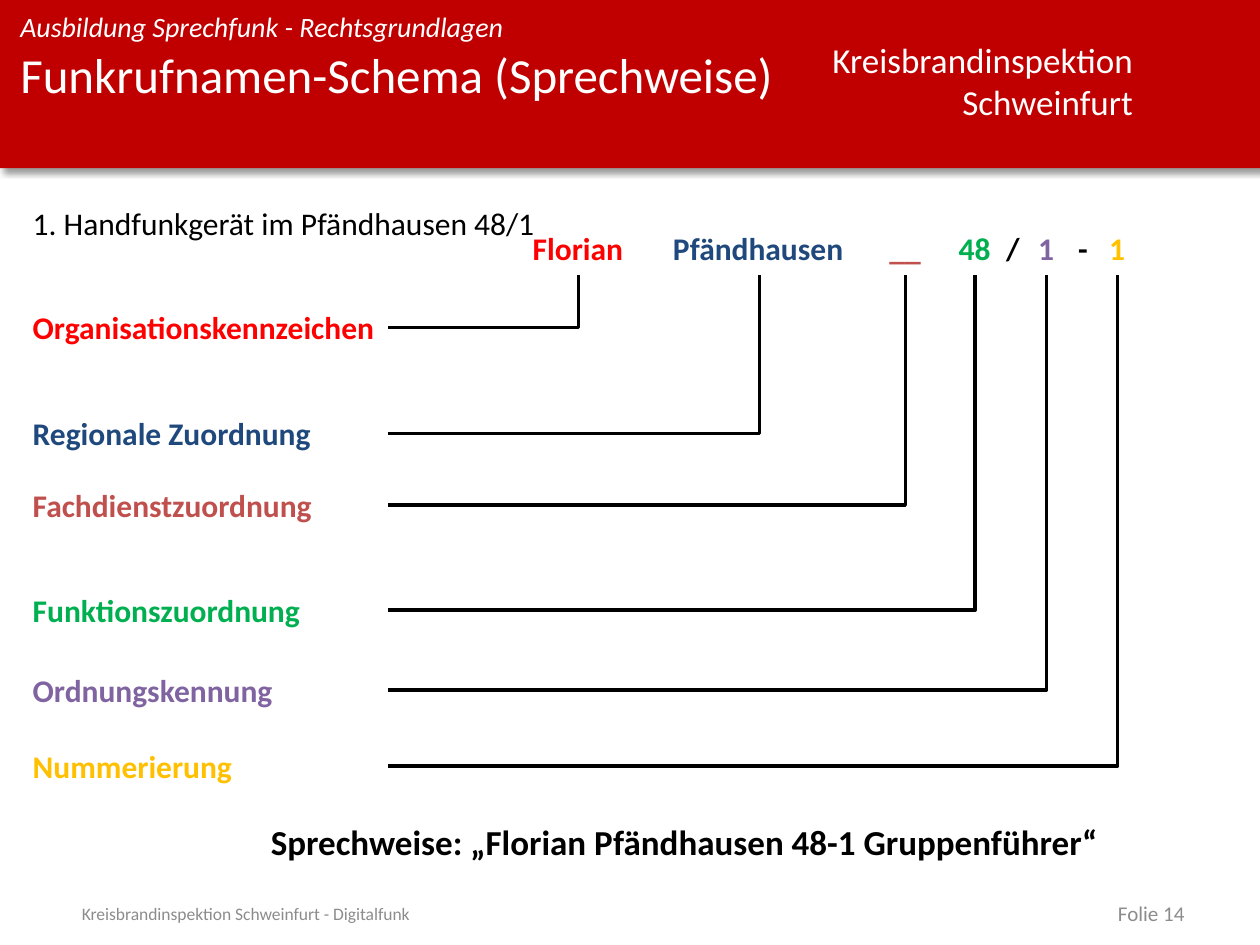
from lxml import etree
from pptx import Presentation
from pptx.dml.color import RGBColor
from pptx.enum.shapes import MSO_CONNECTOR, MSO_SHAPE
from pptx.enum.text import MSO_ANCHOR, MSO_AUTO_SIZE, PP_ALIGN
from pptx.oxml.ns import qn
from pptx.util import Cm, Pt

ELBOW = MSO_CONNECTOR.ELBOW
RECTANGLE = MSO_SHAPE.RECTANGLE
TOP, MIDDLE = MSO_ANCHOR.TOP, MSO_ANCHOR.MIDDLE
LEFT, RIGHT = PP_ALIGN.LEFT, PP_ALIGN.RIGHT
NO_FIT = MSO_AUTO_SIZE.NONE

COLORS = {
    "banner": "C00000",
    "white": "FFFFFF",
    "black": "000000",
    "footer": "8C8C8C",
    "organisation": "FF0000",
    "region": "1F497D",
    "service": "C0504D",
    "function": "00B050",
    "order": "8064A2",
    "number": "FFC000",
}

MARGIN = 0.41
LABEL_WIDTH = 7.44
ROW_HEIGHT = 1.02
CALL_SIGN_TOP = 4.5
BRANCH_LEFT = 7.82
BRANCH_TOP = 5.54

# part, call sign, centre x, width, label, centre y
CALL_SIGN_PARTS = [
    ("organisation", "Florian", 11.66, 2.34, "Organisationskennzeichen", 6.6),
    ("region", "Pfändhausen", 15.31, 3.99, "Regionale Zuordnung", 8.74),
    ("service", "__", 18.25, 1.14, "Fachdienstzuordnung", 10.18),
    ("function", "48", 19.66, 1.17, "Funktionszuordnung", 12.3),
    ("order", "1", 21.1, 0.84, "Ordnungskennung", 13.91),
    ("number", "1", 22.53, 0.84, "Nummerierung", 15.44),
]
SEPARATORS = [("/", 20.43, 0.79), ("-", 21.84, 0.71)]


def rgb(color):
    return RGBColor.from_string(COLORS[color])


def add_text(slide, box, lines, size, color, bold=False, italic=False,
             align=LEFT, anchor=TOP, wrap=True, inset=True):
    frame = slide.shapes.add_textbox(*map(Cm, box)).text_frame
    frame_format = {"word_wrap": wrap, "auto_size": NO_FIT, "vertical_anchor": anchor}
    if not inset:
        for side in ("left", "top", "right", "bottom"):
            frame_format[f"margin_{side}"] = 0
    for name, value in frame_format.items():
        setattr(frame, name, value)
    font_format = {"name": "Calibri", "size": Pt(size), "bold": bold, "italic": italic}
    for index, line in enumerate(lines):
        paragraph = frame.add_paragraph() if index else frame.paragraphs[0]
        paragraph.alignment = align
        run = paragraph.add_run()
        run.text = line
        for name, value in font_format.items():
            setattr(run.font, name, value)
        run.font.color.rgb = rgb(color)


def add_banner(slide):
    banner = slide.shapes.add_shape(RECTANGLE, 0, 0, Cm(25.4), Cm(3.39))
    banner.shadow.inherit = False
    banner.fill.solid()
    banner.fill.fore_color.rgb = rgb("banner")
    banner.line.fill.background()
    effects = banner._element.spPr.find(qn("a:effectLst"))
    shadow = etree.SubElement(effects, qn("a:outerShdw"), blurRad=str(Pt(4)),
                              dist=str(Pt(3)), dir="2700000", algn="tl", rotWithShape="0")
    tone = etree.SubElement(shadow, qn("a:srgbClr"), val=COLORS["black"])
    etree.SubElement(tone, qn("a:alpha"), val="40000")


def add_branch(slide, x, y):
    branch = slide.shapes.add_connector(ELBOW, Cm(BRANCH_LEFT), Cm(y), Cm(x), Cm(BRANCH_TOP))
    branch.line.color.rgb = rgb("black")
    branch.line.width = Pt(2)
    properties = branch._element.spPr
    properties.find(qn("a:prstGeom")).set("prst", "bentConnector2")
    etree.SubElement(properties, qn("a:effectLst"))


def add_call_sign(slide, text, center, width, color):
    box = (center - width / 2, CALL_SIGN_TOP, width, ROW_HEIGHT)
    add_text(slide, box, [text], 18, color, bold=True, wrap=False)


def add_part(slide, part, sign, x, width, label, y):
    add_call_sign(slide, sign, x, width, part)
    label_box = (MARGIN, y - ROW_HEIGHT / 2, LABEL_WIDTH, ROW_HEIGHT)
    add_text(slide, label_box, [label], 18, part, bold=True)
    add_branch(slide, x, y)


def add_header(slide):
    add_banner(slide)
    add_text(slide, (16.46, 0.66, 6.63, 1.96), ["Kreisbrandinspektion", "Schweinfurt"],
             20, "white", align=RIGHT, wrap=False)
    add_text(slide, (MARGIN, 0.2, 16.05, 0.69), ["Ausbildung Sprechfunk - Rechtsgrundlagen"],
             16, "white", italic=True, inset=False)
    add_text(slide, (MARGIN, 0.89, 16.05, 2.51), ["Funkrufnamen-Schema (Sprechweise)"],
             28, "white", inset=False)


def add_footer(slide):
    add_text(slide, (1.4, 18.16, 15.34, 0.51),
             ["Kreisbrandinspektion Schweinfurt - Digitalfunk"], 10, "footer", anchor=MIDDLE)
    add_text(slide, (18.21, 18.16, 5.92, 0.51), ["Folie 14"], 12, "footer",
             align=RIGHT, anchor=MIDDLE)


def main():
    presentation = Presentation()
    presentation.slide_width, presentation.slide_height = Cm(25.4), Cm(19.05)
    slide = presentation.slides.add_slide(presentation.slide_layouts[6])
    add_header(slide)
    add_text(slide, (MARGIN, 3.99, 10.74, ROW_HEIGHT),
             ["1. Handfunkgerät im Pfändhausen 48/1"], 18, "black", wrap=False)
    for part in CALL_SIGN_PARTS:
        add_part(slide, *part)
    for sign, center, width in SEPARATORS:
        add_call_sign(slide, sign, center, width, "black")
    add_text(slide, (5.21, 16.41, 17.35, 1.12),
             ["Sprechweise: „Florian Pfändhausen 48-1 Gruppenführer“"],
             20, "black", bold=True, wrap=False)
    add_footer(slide)
    presentation.save("out.pptx")


if __name__ == "__main__":
    main()
